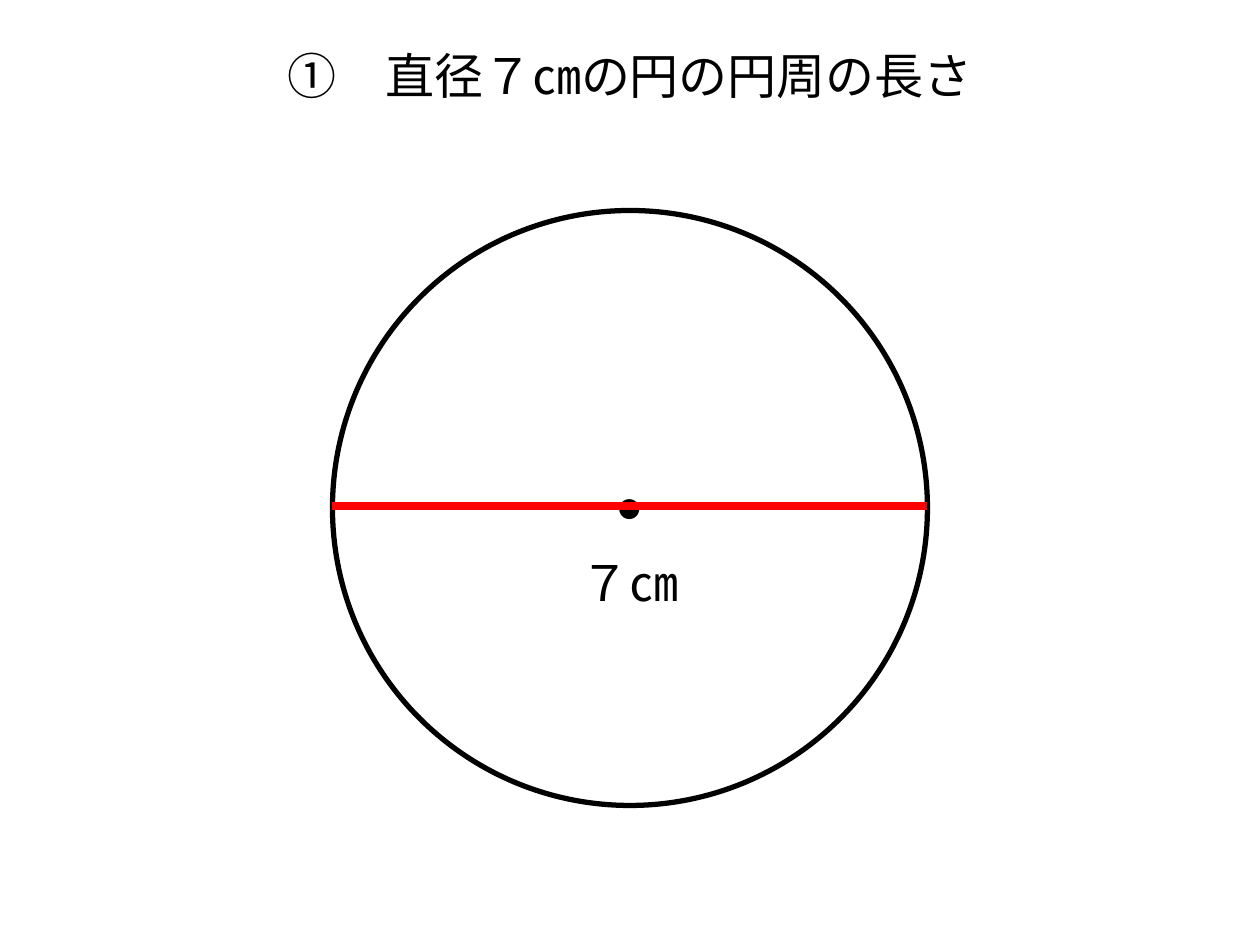
from lxml.etree import SubElement
from pptx import Presentation
from pptx.dml.color import RGBColor
from pptx.enum.shapes import MSO_CONNECTOR, MSO_SHAPE
from pptx.enum.text import MSO_ANCHOR, PP_ALIGN
from pptx.oxml.ns import qn
from pptx.util import Pt


def color(value):
    return RGBColor.from_string(value)


def add_figure(kind, box, outline, weight, text, size, font):
    figure = slide.shapes.add_shape(kind, *map(Pt, box))
    figure.shadow.inherit = False
    figure.fill.solid()
    figure.fill.fore_color.rgb = color("FFFFFF")
    figure.line.color.rgb = color(outline)
    figure.line.width = Pt(weight)
    frame = figure.text_frame
    frame.word_wrap = True
    frame.vertical_anchor = MSO_ANCHOR.MIDDLE
    paragraph = frame.paragraphs[0]
    paragraph.alignment = PP_ALIGN.CENTER
    run = paragraph.add_run()
    run.text = text
    run.font.size = Pt(size)
    run.font.name = font
    run.font.color.rgb = color("000000")
    SubElement(run.font._element, qn("a:ea"), typeface=font)


presentation = Presentation()
presentation.slide_width = Pt(720)
presentation.slide_height = Pt(540)
slide = presentation.slides.add_slide(presentation.slide_layouts[6])

diameter = 340
left = (720 - diameter) / 2
diameter_y = 289.4

add_figure(MSO_SHAPE.OVAL, (left, 120.3, diameter, diameter),
           "000000", 3, "・", 54, "Calibri")
add_figure(MSO_SHAPE.RECTANGLE, (32.4, 18, 655.2, 49.7),
           "FFFFFF", 4.5, "①　直径７㎝の円の円周の長さ", 28, "Noto Sans CJK JP")

diameter_line = slide.shapes.add_connector(
    MSO_CONNECTOR.STRAIGHT, Pt(left), Pt(diameter_y), Pt(left + diameter), Pt(diameter_y))
diameter_line.line.color.rgb = color("FF0000")
diameter_line.line.width = Pt(4.5)
SubElement(diameter_line._element.spPr, qn("a:effectLst"))

add_figure(MSO_SHAPE.RECTANGLE, (301.7, 307.4, 115.9, 49.7),
           "FFFFFF", 4.5, "７㎝", 28, "Noto Sans CJK JP")

presentation.save("out.pptx")
